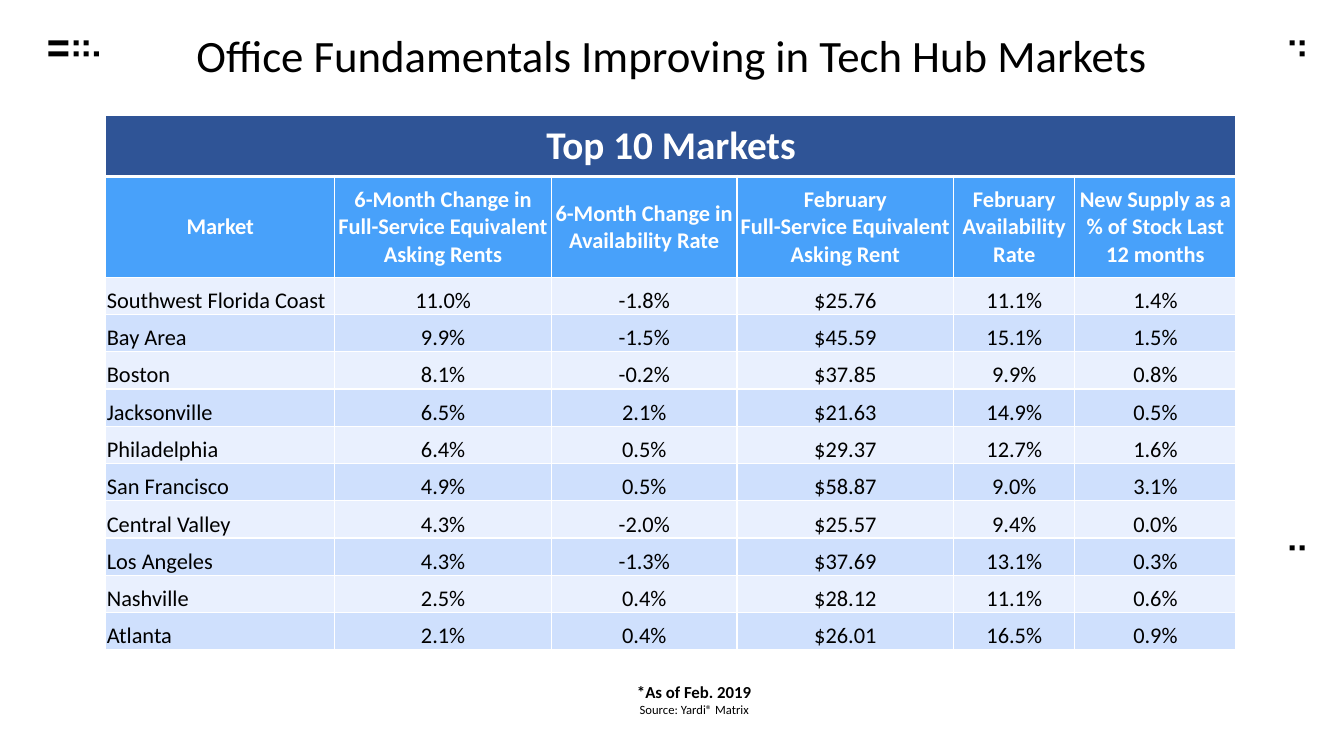
from dataclasses import dataclass
from typing import NamedTuple

import lxml.etree
import pptx
import pptx.dml.color
import pptx.enum.shapes
import pptx.enum.text
import pptx.oxml.ns
import pptx.util

EMU_PER_PX = 9144  # 100 px to the inch
ALIGN = pptx.enum.text.PP_ALIGN
ANCHOR = pptx.enum.text.MSO_ANCHOR


@dataclass(frozen=True)
class Theme:
    font: str = "Calibri"
    ink: str = "000000"
    white: str = "FFFFFF"
    banner: str = "2F5496"
    header: str = "48A1FA"
    bands: tuple[str, str] = ("E9F0FE", "CFE0FD")
    title_size: int = 32
    banner_size: int = 28
    table_size: int = 16
    note_size: int = 12
    source_size: int = 9
    border: int = 1
    heavy_border: int = 3


class Mark(NamedTuple):
    left: int
    top: int
    width: int = 5


class Column(NamedTuple):
    heading: str
    width: int


class Market(NamedTuple):
    name: str
    rent_change: str
    availability_change: str
    asking_rent: str
    availability: str
    new_supply: str


class CellStyle(NamedTuple):
    fill: str
    color: str
    size: int
    bold: bool
    anchor: ANCHOR
    top_border: int
    bottom_border: int


THEME = Theme()
MARK_HEIGHT = 5
MARKS = [
    *(Mark(48, top, 20) for top in (40, 51)),
    *(Mark(left, top) for top in (40, 51) for left in (73, 83)),
    Mark(93, 51),
    Mark(1289, 51),
    *(Mark(left, top) for top in (40, 541) for left in (1279, 1289)),
]
COLUMNS = [
    Column("Market", 227),
    Column("6-Month Change in\nFull-Service Equivalent\nAsking Rents", 215),
    Column("6-Month Change in\nAvailability Rate", 184),
    Column("February\nFull-Service Equivalent\nAsking Rent", 215),
    Column("February\nAvailability\nRate", 120),
    Column("New Supply as a\n% of Stock Last\n12 months", 160),
]
MARKETS = [
    Market("Southwest Florida Coast", "11.0%", "-1.8%", "$25.76", "11.1%", "1.4%"),
    Market("Bay Area", "9.9%", "-1.5%", "$45.59", "15.1%", "1.5%"),
    Market("Boston", "8.1%", "-0.2%", "$37.85", "9.9%", "0.8%"),
    Market("Jacksonville", "6.5%", "2.1%", "$21.63", "14.9%", "0.5%"),
    Market("Philadelphia", "6.4%", "0.5%", "$29.37", "12.7%", "1.6%"),
    Market("San Francisco", "4.9%", "0.5%", "$58.87", "9.0%", "3.1%"),
    Market("Central Valley", "4.3%", "-2.0%", "$25.57", "9.4%", "0.0%"),
    Market("Los Angeles", "4.3%", "-1.3%", "$37.69", "13.1%", "0.3%"),
    Market("Nashville", "2.5%", "0.4%", "$28.12", "11.1%", "0.6%"),
    Market("Atlanta", "2.1%", "0.4%", "$26.01", "16.5%", "0.9%"),
]
BANNER_HEIGHT, HEADER_HEIGHT, MARKET_HEIGHT = 61, 100, 37
BANNER_STYLE = CellStyle(THEME.banner, THEME.white, THEME.banner_size, True,
                         ANCHOR.MIDDLE, THEME.border, THEME.heavy_border)
HEADER_STYLE = CellStyle(THEME.header, THEME.white, THEME.table_size, True,
                         ANCHOR.MIDDLE, THEME.heavy_border, THEME.border)
BAND_STYLES = [CellStyle(fill, THEME.ink, THEME.table_size, False,
                         ANCHOR.BOTTOM, THEME.border, THEME.border)
               for fill in THEME.bands]


def px(length: int) -> pptx.util.Emu:
    return pptx.util.Emu(length * EMU_PER_PX)


def rgb(color: str) -> pptx.dml.color.RGBColor:
    return pptx.dml.color.RGBColor.from_string(color)


def format_paragraph(paragraph, size: int, color: str = THEME.ink,
                     bold: bool = False, align: ALIGN = ALIGN.CENTER) -> None:
    paragraph.alignment = align
    for run in paragraph.runs:
        run.font.name = THEME.font
        run.font.size = pptx.util.Pt(size)
        run.font.bold = bold
        run.font.color.rgb = rgb(color)


def add_mark(slide, mark: Mark) -> None:
    bar = slide.shapes.add_shape(
        pptx.enum.shapes.MSO_SHAPE.RECTANGLE,
        px(mark.left), px(mark.top), px(mark.width), px(MARK_HEIGHT))
    bar.shadow.inherit = False
    bar.fill.solid()
    bar.fill.fore_color.rgb = rgb(THEME.ink)
    bar.line.fill.background()


def add_title(slide) -> None:
    title = slide.shapes.title
    title.left, title.top, title.width, title.height = px(0), px(27), px(1333), px(54)
    frame = title.text_frame
    frame.text = "Office Fundamentals Improving in Tech Hub Markets"
    frame.margin_left = frame.margin_right = frame.margin_top = frame.margin_bottom = 0
    frame.vertical_anchor = ANCHOR.TOP
    format_paragraph(frame.paragraphs[0], THEME.title_size)


def add_footnote(slide) -> None:
    frame = slide.shapes.add_textbox(px(209), px(671), px(959), px(45)).text_frame
    frame.word_wrap = True
    frame.text = "*As of Feb. 2019\nSource: Yardi® Matrix"
    note, source = frame.paragraphs
    format_paragraph(note, THEME.note_size, bold=True)
    format_paragraph(source, THEME.source_size)


def set_borders(cell, style: CellStyle) -> None:
    properties = cell._tc.get_or_add_tcPr()
    qn = pptx.oxml.ns.qn
    sides = {"lnL": THEME.border, "lnR": THEME.border,
             "lnT": style.top_border, "lnB": style.bottom_border}
    for side, width in sides.items():
        line = lxml.etree.SubElement(properties, qn(f"a:{side}"),
                                     w=str(pptx.util.Pt(width)))
        fill = lxml.etree.SubElement(line, qn("a:solidFill"))
        lxml.etree.SubElement(fill, qn("a:srgbClr"), val=THEME.white)


def fill_row(table, row: int, texts: list[str], style: CellStyle,
             first_align: ALIGN = ALIGN.CENTER) -> None:
    for column, text in enumerate(texts):
        cell = table.cell(row, column)
        set_borders(cell, style)
        cell.fill.solid()
        cell.fill.fore_color.rgb = rgb(style.fill)
        cell.vertical_anchor = style.anchor
        cell.margin_left = cell.margin_right = cell.margin_top = px(1)
        cell.margin_bottom = 0
        cell.text_frame.text = text
        for paragraph in cell.text_frame.paragraphs:
            format_paragraph(paragraph, style.size, style.color, style.bold,
                             ALIGN.CENTER if column else first_align)


def add_market_table(slide) -> None:
    heights = [BANNER_HEIGHT, HEADER_HEIGHT] + [MARKET_HEIGHT] * len(MARKETS)
    width = sum(column.width for column in COLUMNS)
    table = slide.shapes.add_table(len(heights), len(COLUMNS), px(105), px(114),
                                   px(width), px(sum(heights))).table
    table.first_row = table.horz_banding = False
    for index, column in enumerate(COLUMNS):
        table.columns[index].width = px(column.width)
    for index, height in enumerate(heights):
        table.rows[index].height = px(height)

    fill_row(table, 0, ["Top 10 Markets"] + [""] * (len(COLUMNS) - 1), BANNER_STYLE)
    table.cell(0, 0).merge(table.cell(0, len(COLUMNS) - 1))
    fill_row(table, 1, [column.heading for column in COLUMNS], HEADER_STYLE)
    for index, market in enumerate(MARKETS):
        fill_row(table, index + 2, list(market), BAND_STYLES[index % 2], ALIGN.LEFT)


def main() -> None:
    deck = pptx.Presentation()
    deck.slide_width, deck.slide_height = px(1333), px(750)
    slide = deck.slides.add_slide(deck.slide_layouts.get_by_name("Title Only"))
    for mark in MARKS:
        add_mark(slide, mark)
    add_footnote(slide)
    add_title(slide)
    add_market_table(slide)
    deck.save("out.pptx")


if __name__ == "__main__":
    main()
